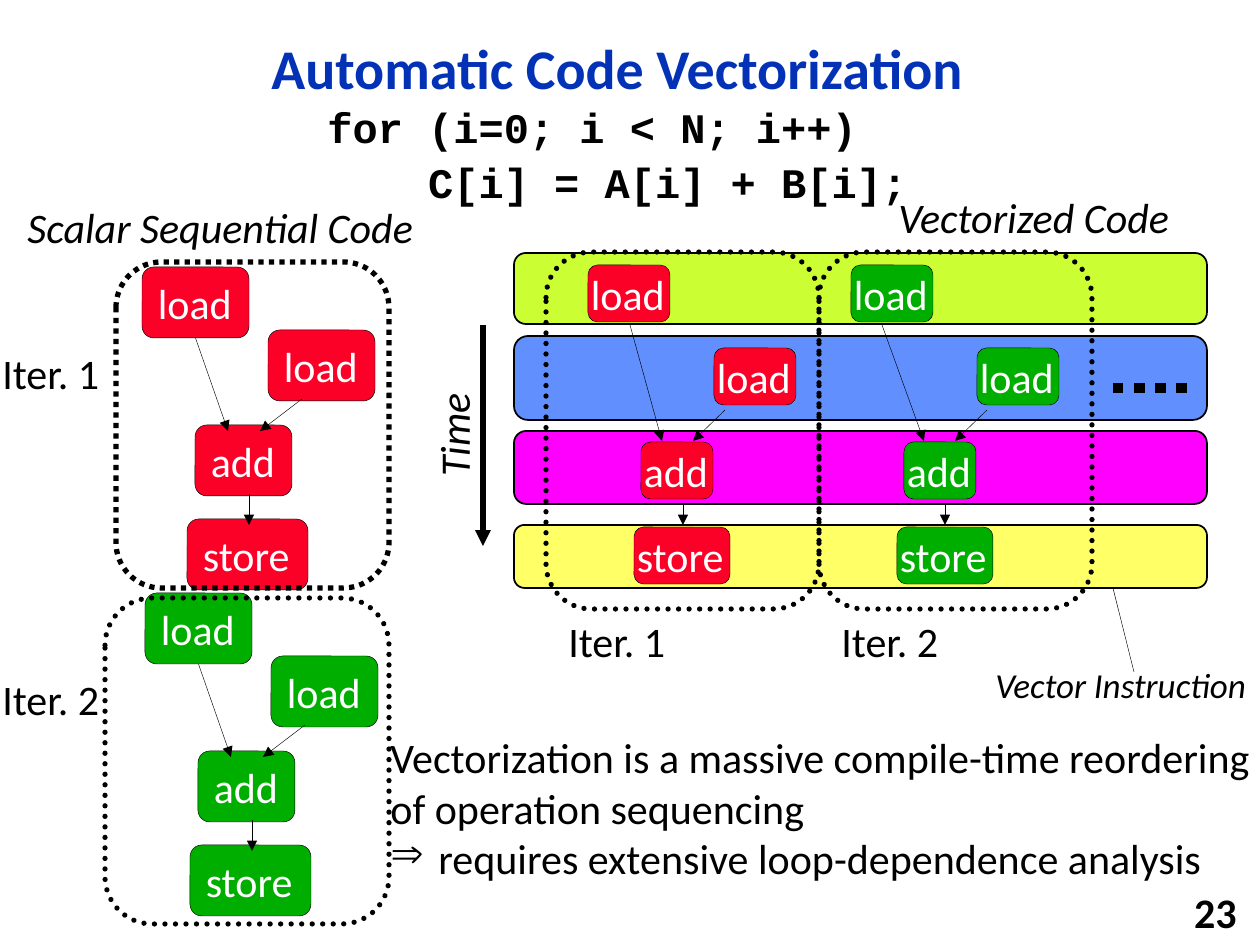
from lxml.etree import SubElement
from pptx import Presentation
from pptx.dml.color import RGBColor
from pptx.enum.dml import MSO_LINE
from pptx.enum.shapes import MSO_CONNECTOR, MSO_SHAPE
from pptx.enum.text import MSO_ANCHOR, MSO_AUTO_SIZE, PP_ALIGN
from pptx.oxml.ns import qn
from pptx.util import Emu, Pt

HUES = {
    "black": "000000", "white": "FFFFFF", "title": "0332B7",
    "red": "FC0128", "green": "00AE00", "lime": "CCFF33",
    "blue": "618FFD", "pink": "FF00FF", "yellow": "FFFF66",
}
COLORS = {name: RGBColor.from_string(code) for name, code in HUES.items()}


def px(*vals):
    """Turn pixels (126 to the inch) into EMU."""
    return [Emu(round(v * 914400 / 126)) for v in vals]


def write(shape, lines, size=24, color="black", font="Calibri",
          bold=False, italic=False, wrap=False, pad=None):
    """Fill a shape with one run per line, anchored in the middle."""
    frame = shape.text_frame
    frame.word_wrap = wrap
    frame.auto_size = MSO_AUTO_SIZE.SHAPE_TO_FIT_TEXT
    frame.vertical_anchor = MSO_ANCHOR.MIDDLE
    if pad is not None:
        frame.margin_left = frame.margin_right = pad
        frame.margin_top = frame.margin_bottom = pad
    for i, line in enumerate(lines):
        para = frame.add_paragraph() if i else frame.paragraphs[0]
        para.alignment = PP_ALIGN.LEFT
        run = para.add_run()
        run.text = line
        run.font.name = font
        run.font.size = Pt(size)
        run.font.bold = bold
        run.font.italic = italic
        run.font.color.rgb = COLORS[color]
    return frame


deck = Presentation()
deck.slide_width, deck.slide_height = px(1260, 945)
slide = deck.slides.add_slide(deck.slide_layouts[6])
shapes = slide.shapes

# Title, page number and loop code
head = write(shapes.add_textbox(*px(115, 20, 1005, 102)),
             ["Automatic Code Vectorization"], 32, "title", bold=True, wrap=True)
head.auto_size = MSO_AUTO_SIZE.NONE
head.paragraphs[0].alignment = PP_ALIGN.CENTER
head.paragraphs[0].line_spacing = 0.9

page = write(shapes.add_textbox(*px(987, 892, 262, 40)), ["23"], bold=True)
page.auto_size = MSO_AUTO_SIZE.NONE
page.paragraphs[0].alignment = PP_ALIGN.RIGHT

code = write(shapes.add_textbox(*px(315, 95, 605, 118)),
             ["for (i=0; i < N; i++)", "    C[i] = A[i] + B[i];"],
             font="Courier New", bold=True)
for para in code.paragraphs:
    para.space_before = Pt(3)

# Vector instruction bands
boxes = [
    (514, 336, 693, 84, "blue", 1, "", None),
    (514, 253, 693, 71, "lime", 1, "", None),
    (514, 431, 693, 73, "pink", 1, "", None),
    (514, 525, 693, 63, "yellow", 1, "", None),
]

# Each flow: nodes (name, x, y, width) and arrows, from its top left corner
scalar = [("load", 0, 0, 107), ("load", 126, 63, 107),
          ("add", 53, 158, 97), ("store", 45, 252, 121)]
vector = [("load", 0, 0, 82), ("load", 126, 83, 82),
          ("add", 53, 177, 72), ("store", 46, 262, 96)]
steps = [(54, 71, 86, 164), (160, 132, 118, 164), (107, 227, 107, 258)]
flows = [
    (142, 267, "red", scalar, 71, None, steps),
    (145, 593, "green", scalar, 71, None, steps),
    (588, 265, "red", vector, 57, 0,
     [(42, 60, 74, 176), (137, 145, 105, 176), (95, 239, 95, 260)]),
    (851, 265, "green", vector, 57, 0,
     [(31, 60, 73, 176), (136, 145, 104, 176), (94, 239, 94, 260)]),
]
for x, y, hue, nodes, high, pad, _ in flows:
    for name, dx, dy, wide in nodes:
        boxes.append((x + dx, y + dy, wide, high, hue, 0.25, name, pad))

# Dotted iteration frames
boxes += [
    (116, 262, 273, 326, None, 3, "", None),
    (105, 598, 284, 326, None, 3, "", None),
    (546, 252, 273, 357, None, 3, "", None),
    (819, 252, 273, 357, None, 3, "", None),
]

made = {}
for x, y, wide, high, hue, weight, name, pad in boxes:
    box = shapes.add_shape(MSO_SHAPE.ROUNDED_RECTANGLE, *px(x, y, wide, high))
    box.shadow.inherit = False
    box.line.color.rgb = COLORS["black"]
    box.line.width = Pt(weight)
    if hue:
        box.fill.solid()
        box.fill.fore_color.rgb = COLORS[hue]
    else:
        box.fill.background()
        box.line.dash_style = MSO_LINE.ROUND_DOT
        if (x, y) != (116, 262):
            box._element.spPr.find(qn("a:ln")).set("cap", "rnd")
    if name:
        write(box, [name], color="white", pad=pad)
    made[x, y] = box

# Lines: ends, weight, arrowhead, dots, box joined at the start
lines = [
    (1113, 588, 1134, 672, 0.25, False, False, None),
    (483, 325, 483, 546, 3, True, False, None),
    (1113, 388, 1187, 388, 6, False, True, None),
]
for x, y, _, nodes, _, _, arrows in flows:
    for i, (x1, y1, x2, y2) in enumerate(arrows):
        start = made[x, y] if nodes is scalar and i == 0 else None
        lines.append((x + x1, y + y1, x + x2, y + y2, 0.25, True, False, start))

for x1, y1, x2, y2, weight, tip, dots, start in lines:
    link = shapes.add_connector(MSO_CONNECTOR.STRAIGHT, *px(x1, y1, x2, y2))
    if start:
        link.begin_connect(start, 2)
    link.line.color.rgb = COLORS["black"]
    link.line.width = Pt(weight)
    if dots:
        link.line.dash_style = MSO_LINE.ROUND_DOT
    props = link._element.spPr
    if tip:
        SubElement(props.find(qn("a:ln")), qn("a:tailEnd"), type="triangle")
    SubElement(props, qn("a:effectLst"))

# Labels
for text, x, y, wide, high, size, slant, turn in [
    ("Iter. 1", -10, 341, 128, 64, 24, False, 0),
    ("Iter. 2", -10, 667, 128, 64, 24, False, 0),
    ("Iter. 1", 556, 609, 136, 64, 24, False, 0),
    ("Iter. 2", 829, 609, 136, 64, 24, False, 0),
    ("Scalar Sequential Code", 15, 195, 426, 64, 24, True, 0),
    ("Vectorized Code", 886, 185, 312, 64, 24, True, 0),
    ("Vector Instruction", 983, 657, 290, 55, 20, True, 0),
    ("Time", 393, 397, 120, 64, 24, True, 270),
]:
    label = shapes.add_textbox(*px(x, y, wide, high))
    label.rotation = turn
    write(label, [text], size, italic=slant)

# Closing remark
note = write(shapes.add_textbox(*px(378, 725, 903, 165)),
             ["Vectorization is a massive compile-time reordering of operation sequencing",
              "requires extensive loop-dependence analysis"], wrap=True)
inset = px(48)[0]
props = note.paragraphs[1]._p.get_or_add_pPr()
props.set("marL", str(inset))
props.set("indent", str(-inset))
SubElement(props, qn("a:buChar"), char="⇒")

deck.save("out.pptx")
